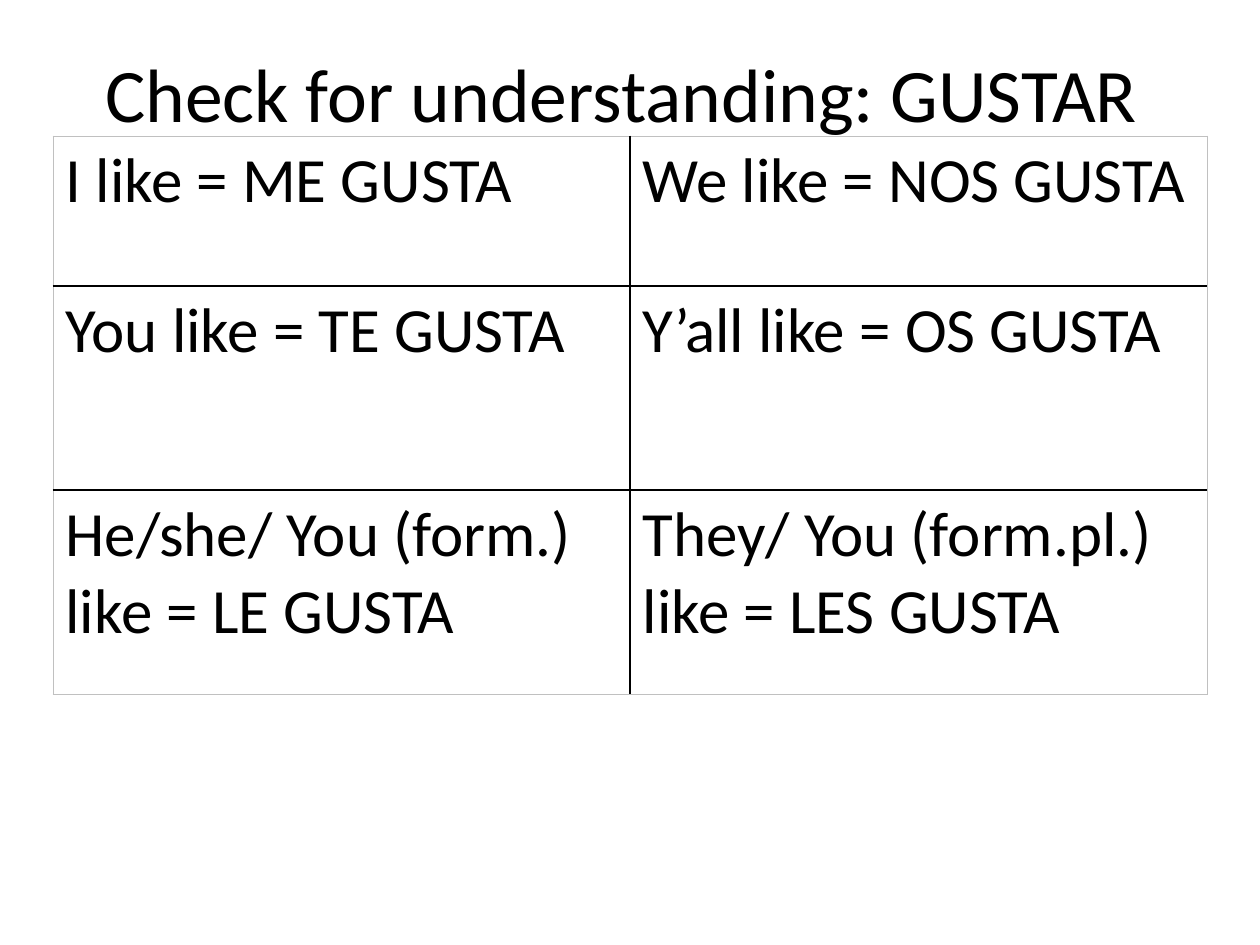
"""Build a slide that reviews the forms of GUSTAR in a two-column table."""
from dataclasses import dataclass

from lxml.etree import SubElement
from pptx import Presentation
from pptx.dml.color import RGBColor
from pptx.enum.text import MSO_ANCHOR, PP_ALIGN
from pptx.oxml.ns import qn
from pptx.util import Inches, Pt

TITLE = "Check for understanding: GUSTAR "
FORMS = [
    ("I like = ME GUSTA", "We like = NOS GUSTA"),
    ("You like = TE GUSTA", "Y’all like = OS GUSTA"),
    ("He/she/ You (form.) like = LE GUSTA", "They/ You (form.pl.) like = LES GUSTA"),
]
ROW_HEIGHTS = [1.19, 1.62, 1.62]
COLUMN_WIDTH = 4.58


@dataclass(frozen=True)
class Theme:
    font: str = "Calibri"
    ink: str = "000000"
    paper: str = "FFFFFF"
    frame: str = "C0C0C0"
    title_size: float = 43.2
    form_size: float = 36
    inner_width: float = 1
    frame_width: float = 0.5


THEME = Theme()


def write(frame, text, size, align=PP_ALIGN.LEFT, anchor=MSO_ANCHOR.TOP):
    frame.word_wrap = True
    frame.vertical_anchor = anchor
    paragraph = frame.paragraphs[0]
    paragraph.alignment = align
    run = paragraph.add_run()
    run.text = text
    run.font.name = THEME.font
    run.font.size = Pt(size)
    run.font.color.rgb = RGBColor.from_string(THEME.ink)


def draw_borders(cell, outer_sides):
    properties = cell._tc.get_or_add_tcPr()
    for side, is_outer in outer_sides.items():
        color, width = (
            (THEME.frame, THEME.frame_width) if is_outer
            else (THEME.ink, THEME.inner_width)
        )
        line = SubElement(properties, qn(f"a:ln{side}"), w=str(Pt(width)))
        fill = SubElement(line, qn("a:solidFill"))
        SubElement(fill, qn("a:srgbClr"), val=color)


def add_forms(slide):
    rows, columns = len(FORMS), len(FORMS[0])
    table = slide.shapes.add_table(
        rows, columns, Inches(0.42), Inches(1.08),
        Inches(COLUMN_WIDTH * columns), Inches(sum(ROW_HEIGHTS)),
    ).table
    table.first_row = table.horz_banding = False
    for column in table.columns:
        column.width = Inches(COLUMN_WIDTH)
    for r, (forms, height) in enumerate(zip(FORMS, ROW_HEIGHTS)):
        table.rows[r].height = Inches(height)
        for c, form in enumerate(forms):
            cell = table.cell(r, c)
            draw_borders(cell, {
                "L": c == 0, "R": c == columns - 1,
                "T": r == 0, "B": r == rows - 1,
            })
            cell.fill.solid()
            cell.fill.fore_color.rgb = RGBColor.from_string(THEME.paper)
            write(cell.text_frame, form, THEME.form_size)


def main():
    deck = Presentation()
    deck.slide_width, deck.slide_height = Inches(10), Inches(7.5)
    slide = deck.slides.add_slide(deck.slide_layouts[6])
    heading = slide.shapes.add_textbox(Inches(0.5), Inches(0.3), Inches(9), Inches(0.87))
    write(heading.text_frame, TITLE, THEME.title_size,
          align=PP_ALIGN.CENTER, anchor=MSO_ANCHOR.MIDDLE)
    add_forms(slide)
    deck.save("out.pptx")


if __name__ == "__main__":
    main()
